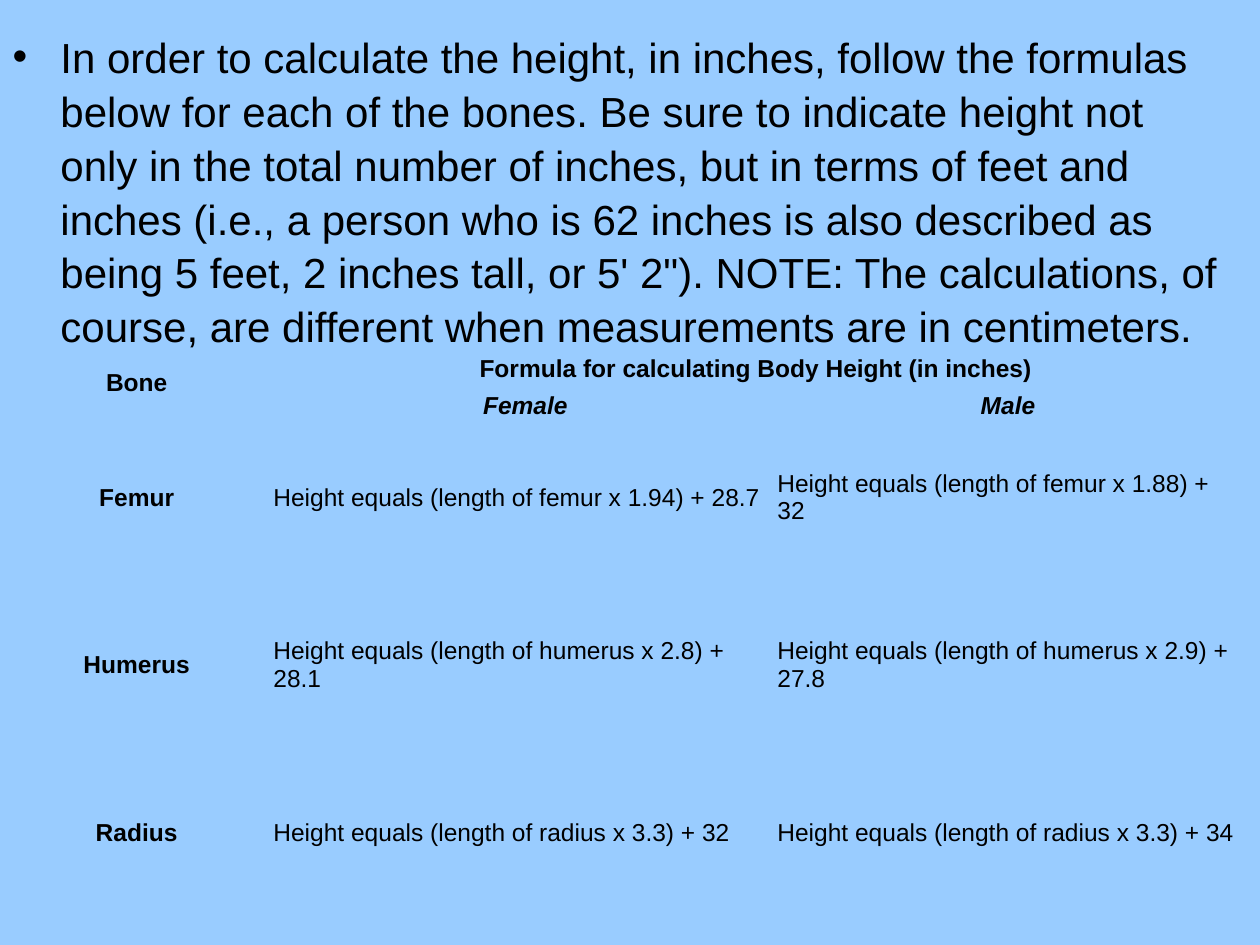
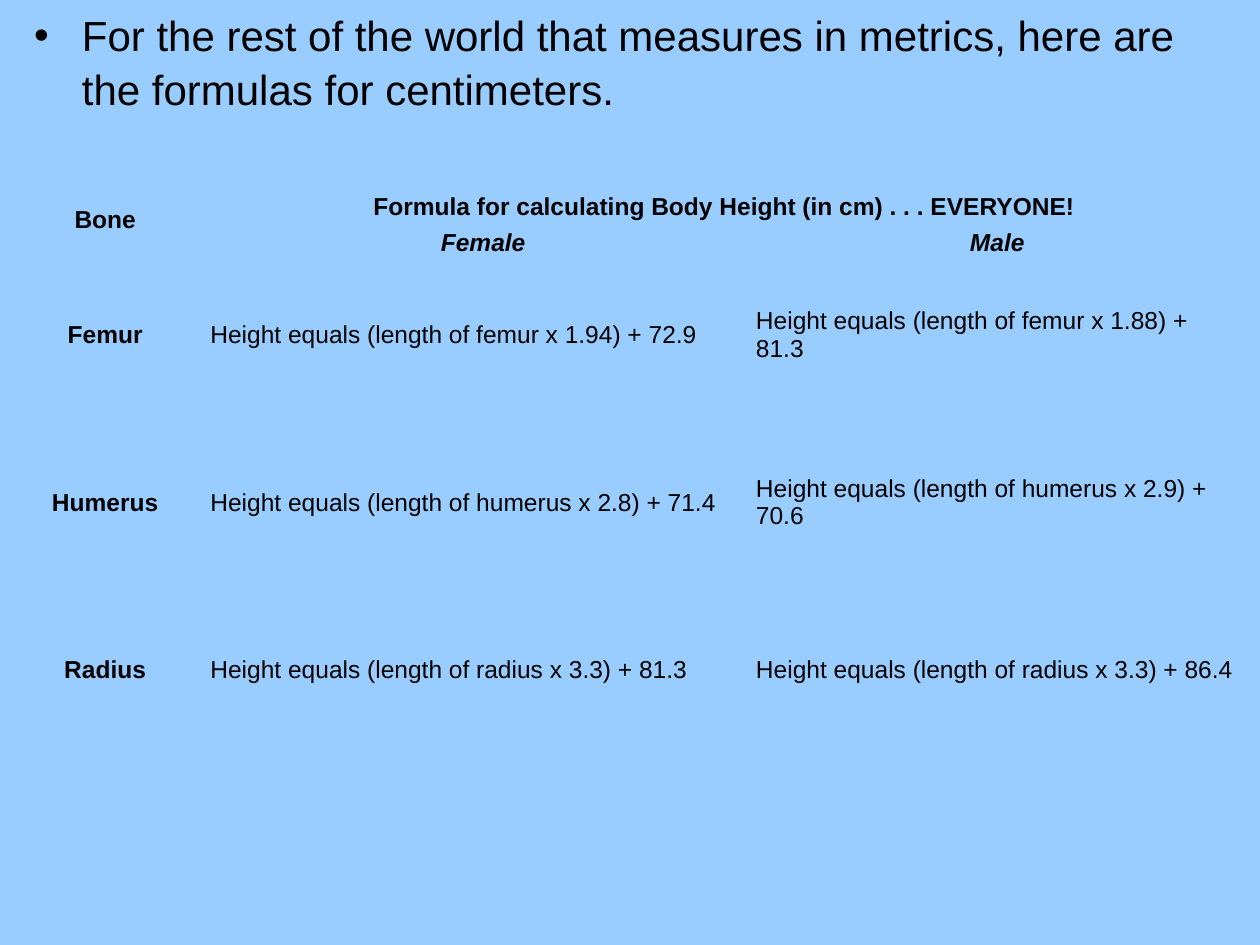
from pptx import Presentation
from pptx import util as u
from pptx.dml.color import RGBColor
from pptx.enum import text as t
from pptx.oxml import parse_xml
from pptx.oxml.ns import nsdecls, qn

INK = {"sky": "99CCFF", "text": "000000"}
FACE = "Arial"
PLAIN = "{2D5ABB26-0587-4C30-8999-92F81FD0307C}"  # no style, no grid
ROWS = [0.36, 0.18, 1.24, 1.42, 1.24]
BONES = ["Femur", "Humerus", "Radius"]


def tint(name):
    return RGBColor.from_string(INK[name])


def style(font, size, bold=False, slant=False):
    font.name, font.size = FACE, u.Pt(size)
    font.bold, font.italic = bold, slant
    font.color.rgb = tint("text")


def add_run(para, words, size, bold=False, slant=False):
    run = para.add_run()
    run.text = words
    style(run.font, size, bold, slant)


def place(shape, box):
    shape.left, shape.top, shape.width, shape.height = map(u.Inches, box)


def add_intro(slide, box, words):
    """Bulleted lead text in the body placeholder."""
    body = slide.placeholders[1]
    place(body, box)
    frame = body.text_frame
    frame.word_wrap = True
    frame.auto_size = t.MSO_AUTO_SIZE.NONE
    frame.vertical_anchor = t.MSO_ANCHOR.TOP
    para = frame.paragraphs[0]
    props = para._p.get_or_add_pPr()
    props.set("marL", str(u.Inches(0.38)))
    props.set("indent", str(u.Inches(-0.38)))
    props.append(parse_xml(
        f'<a:buClr {nsdecls("a")}><a:srgbClr val="{INK["text"]}"/></a:buClr>'))
    props.append(parse_xml(f'<a:buChar {nsdecls("a")} char="•"/>'))
    para.space_before = u.Pt(0)
    para.line_spacing = 1.07
    add_run(para, words, 24)


def fill_cell(cell, words, bold, slant, mid):
    cell.fill.background()
    cell.margin_left = cell.margin_right = 0
    cell.margin_top = cell.margin_bottom = 0
    cell.vertical_anchor = t.MSO_ANCHOR.MIDDLE
    para = cell.text_frame.paragraphs[0]
    para.alignment = t.PP_ALIGN.CENTER if mid else t.PP_ALIGN.LEFT
    style(para.font, 14, bold, slant)
    if words:
        add_run(para, words, 14, bold, slant)


def add_grid(slide, left, top, cols, head, sums):
    """Height formulas by bone and sex."""
    grid = slide.shapes.add_table(
        len(ROWS), len(cols), u.Inches(left), u.Inches(top),
        u.Inches(sum(cols)), u.Inches(sum(ROWS))).table
    grid.first_row = grid.horz_banding = False
    grid._tbl.tblPr.find(qn("a:tableStyleId")).text = PLAIN
    for col, wide in zip(grid.columns, cols):
        col.width = u.Inches(wide)
    for row, tall in zip(grid.rows, ROWS):
        row.height = u.Inches(tall)

    # Two heading rows, then one row for each bone
    lines = [["Bone", head, ""], ["", "Female", "Male"]]
    for bone, pair in zip(BONES, sums):
        lines.append([bone] + [
            f"Height equals (length of {bone.lower()} x {part}" for part in pair])
    for r, line in enumerate(lines):
        for c, words in enumerate(line):
            top_row = r < 2 or c == 0
            fill_cell(grid.cell(r, c), words, top_row, r == 1 and c > 0, top_row)
    grid.cell(0, 0).merge(grid.cell(1, 0))
    grid.cell(0, 1).merge(grid.cell(0, 2))


def add_page(deck, intro, grid):
    slide = deck.slides.add_slide(deck.slide_layouts[1])
    title = slide.shapes.title._element
    title.getparent().remove(title)
    add_intro(slide, *intro)
    add_grid(slide, *grid)


def main():
    deck = Presentation()
    deck.slide_width, deck.slide_height = u.Inches(10), u.Inches(7.5)
    back = deck.slide_master.background.fill
    back.solid()
    back.fore_color.rgb = tint("sky")

    # Inches
    add_page(
        deck,
        ((0, 0.17, 9.86, 2.67),
         "In order to calculate the height, in inches, follow the formulas "
         "below for each of the bones. Be sure to indicate height not only in "
         "the total number of inches, but in terms of feet and inches (i.e., "
         "a person who is 62 inches is also described as being 5 feet, "
         "2 inches tall, or 5' 2\"). NOTE: The calculations, of course, are "
         "different when measurements are in centimeters."),
        (0, 2.75, [2.17, 4, 3.66],
         "Formula for calculating Body Height (in inches)",
         [("1.94) + 28.7", "1.88) + 32"),
          ("2.8) + 28.1", "2.9) + 27.8"),
          ("3.3) + 32", "3.3) + 34")]))

    # Centimeters
    add_page(
        deck,
        ((0.17, 0, 9.7, 1.42),
         "For the rest of the world that measures in metrics, here are the "
         "formulas for centimeters."),
        (0, 1.46, [1.67, 4.33, 3.83],
         "Formula for calculating Body Height (in cm) . . . EVERYONE!",
         [("1.94) + 72.9", "1.88) + 81.3"),
          ("2.8) + 71.4", "2.9) + 70.6"),
          ("3.3) + 81.3", "3.3) + 86.4")]))

    deck.save("out.pptx")


if __name__ == "__main__":
    main()
